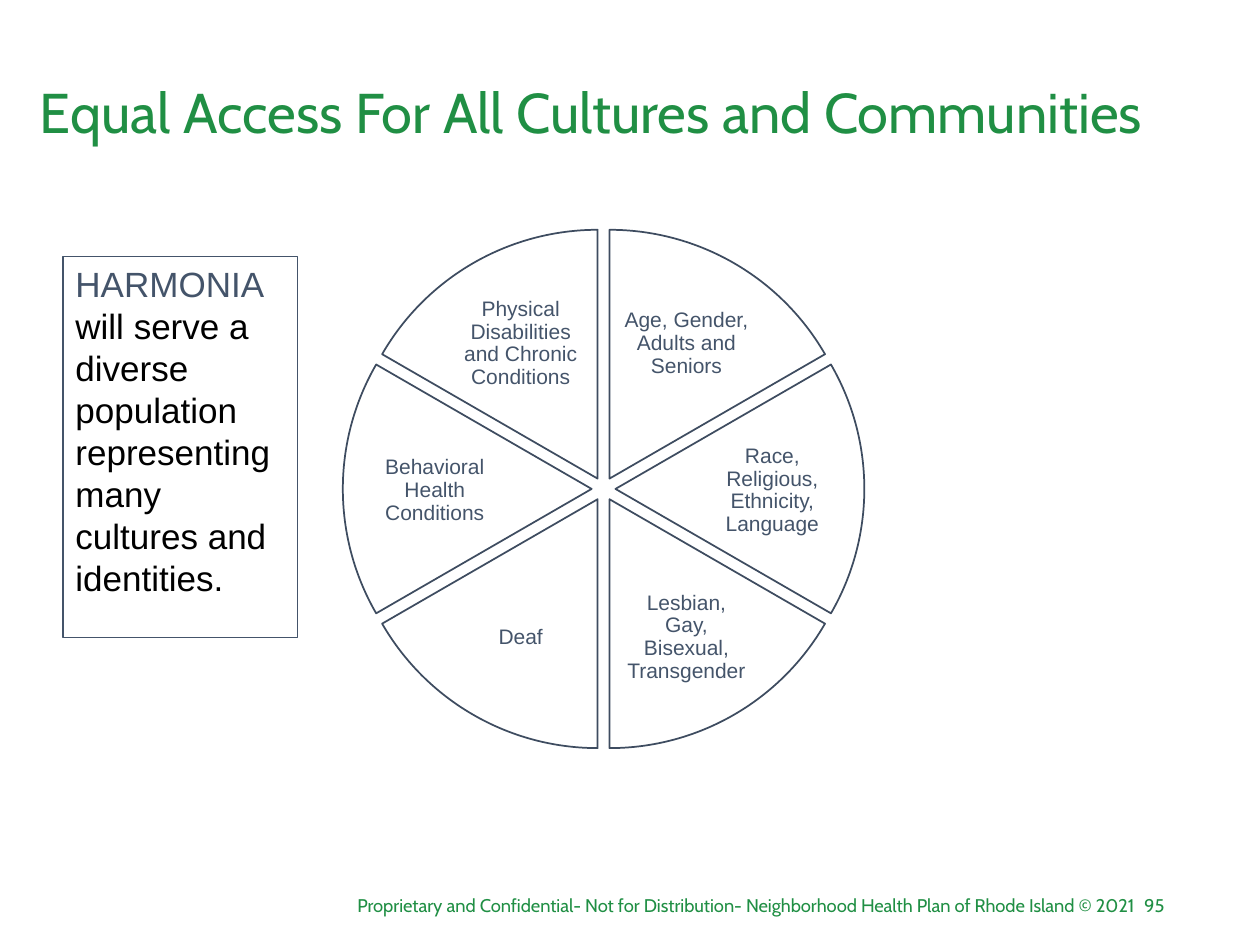
"""Build a slide with a six-part wheel of communities beside a short statement."""
from math import cos, radians, sin, tan

from lxml import etree
from pptx import Presentation
from pptx.dml.color import RGBColor
from pptx.enum.shapes import MSO_SHAPE
from pptx.enum.text import MSO_ANCHOR, PP_ALIGN
from pptx.oxml.ns import qn
from pptx.util import Pt

RECT = MSO_SHAPE.RECTANGLE
TOP, MIDDLE = MSO_ANCHOR.TOP, MSO_ANCHOR.MIDDLE
LEFT, CENTER, RIGHT = PP_ALIGN.LEFT, PP_ALIGN.CENTER, PP_ALIGN.RIGHT

COLORS = {"green": "208F44", "slate": "44546A", "edge": "3E4C60",
          "black": "000000", "white": "FFFFFF"}

TITLE = "Equal Access For All Cultures and Communities"
STATEMENT = [
    ("HARMONIA", "slate"),
    ("will serve a diverse population representing many cultures and identities.", "black"),
]
UPPER = (150.5, 37.4, 62.6, 191.5)
SIDE = (194.4, 116.6, 15.1, 114.5)
LOWER = (150.5, 193.7, 62.6, 36)
WEDGES = [
    ("Age, Gender, Adults and Seniors", UPPER),
    ("Race, Religious, Ethnicity, Language", SIDE),
    ("Lesbian, Gay, Bisexual, Transgender", LOWER),
    ("Deaf", LOWER),
    ("Behavioral Health Conditions", SIDE),
    ("Physical Disabilities and Chronic Conditions", UPPER),
]
FOOTERS = [
    ("95", (639.4, 507.6, 33.1, 20.2)),
    ("Proprietary and Confidential- Not for Distribution- "
     "Neighborhood Health Plan of Rhode Island © 2021", (180, 507.6, 475.9, 20.2)),
]

HUB = (344.9, 279.4)
RADIUS, GAP = 142.2, 6.8


def rgb(name):
    return RGBColor.from_string(COLORS[name])


def polar(origin, radius, angle):
    return (origin[0] + radius * cos(radians(angle)),
            origin[1] + radius * sin(radians(angle)))


def write(tf, items, size, font, align=LEFT, anchor=TOP, spacing=1.0):
    tf.word_wrap = True
    tf.vertical_anchor = anchor
    for i, (text, color) in enumerate(items):
        p = tf.add_paragraph() if i else tf.paragraphs[0]
        p.text = text
        p.alignment = align
        p.line_spacing = spacing
        p.font.size = Pt(size)
        p.font.name = font
        p.font.color.rgb = rgb(color)


def add_text(s, box, text, size, **layout):
    sp = s.shapes.add_textbox(*map(Pt, box))
    write(sp.text_frame, [(text, "green")], size, "Cabin", **layout)


def add_statement(s):
    sp = s.shapes.add_shape(RECT, Pt(36), Pt(146.4), Pt(134), Pt(218))
    sp.shadow.inherit = False
    sp.fill.background()
    sp.line.color.rgb = rgb("slate")
    sp.line.width = Pt(0.75)
    write(sp.text_frame, STATEMENT, 20, "Arial")


def set_outline(sp, start, sweep):
    center = (RADIUS, RADIUS)
    first, last = polar(center, RADIUS, start), polar(center, RADIUS, start + sweep)
    handle = RADIUS * 4 / 3 * tan(radians(sweep / 4))
    curve = [polar(first, handle, start + 90), polar(last, handle, start + sweep - 90), last]
    steps = [("a:moveTo", [first]), ("a:cubicBezTo", curve),
             ("a:lnTo", [center]), ("a:lnTo", [first]), ("a:close", [])]
    outline = next(sp.element.iter(qn("a:path")))
    for child in list(outline):
        outline.remove(child)
    for side in "wh":
        outline.set(side, str(Pt(2 * RADIUS)))
    for tag, points in steps:
        step = etree.SubElement(outline, qn(tag))
        for x, y in points:
            etree.SubElement(step, qn("a:pt"), x=str(Pt(x)), y=str(Pt(y)))


def add_wedge(wheel, text, insets, start, sweep):
    middle = start + sweep / 2
    apex = polar(HUB, GAP, middle)
    left, top = apex[0] - RADIUS, apex[1] - RADIUS
    right, bottom = left + 2 * RADIUS, top + 2 * RADIUS
    builder = wheel.shapes.build_freeform(Pt(left), Pt(top))
    builder.add_line_segments([(Pt(right), Pt(top)), (Pt(right), Pt(bottom))])
    sp = builder.convert_to_shape()
    set_outline(sp, start, sweep)
    sp.shadow.inherit = False
    sp.fill.solid()
    sp.fill.fore_color.rgb = rgb("white")
    sp.line.color.rgb = rgb("edge")
    sp.line.width = Pt(1)

    inner, above, outer, below = map(Pt, insets)
    tf = sp.text_frame
    tf.margin_left, tf.margin_right = (inner, outer) if apex[0] > HUB[0] else (outer, inner)
    tf.margin_top, tf.margin_bottom = above, below
    write(tf, [(text, "slate")], 12, "Arial", CENTER, MIDDLE, 0.9)
    tf.paragraphs[0].space_after = Pt(4.2)


def main():
    prs = Presentation()
    prs.slide_width, prs.slide_height = Pt(720), Pt(540)
    s = prs.slides.add_slide(prs.slide_layouts[6])
    for text, box in FOOTERS:
        add_text(s, box, text, 10.5, align=RIGHT)
    add_text(s, (15.8, 20.9, 660.2, 90), TITLE, 32, anchor=MIDDLE, spacing=0.9)
    wheel = s.shapes.add_group_shape()
    sweep = 360 // len(WEDGES)
    for i, (text, insets) in enumerate(WEDGES):
        add_wedge(wheel, text, insets, i * sweep - 90, sweep)
    add_statement(s)
    prs.save("out.pptx")


if __name__ == "__main__":
    main()
